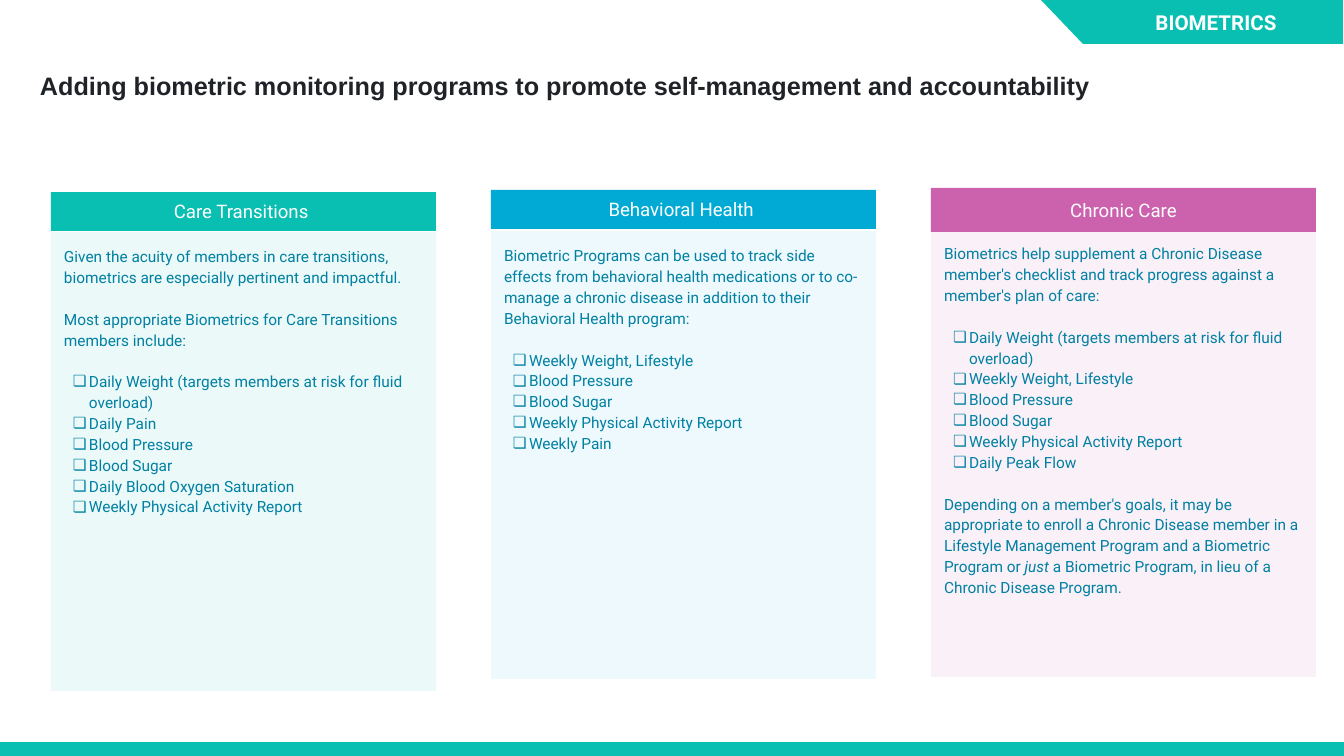
import dataclasses
from typing import Any

import pptx
import pptx.dml.color
import pptx.enum.shapes
import pptx.enum.text
import pptx.oxml
import pptx.oxml.ns
import pptx.util

PX = pptx.util.Inches(1) / 84
PAD = 13
COLORS = {"teal": "09BFB1", "blue": "00AAD5", "pink": "CC61AD",
          "text": "0080A3", "dark": "1F2327", "white": "FFFFFF"}
ALIGN = pptx.enum.text.PP_ALIGN
ANCHOR = pptx.enum.text.MSO_ANCHOR
RECT = pptx.enum.shapes.MSO_SHAPE.RECTANGLE
Pt = pptx.util.Pt

TITLE = {"name": "Arial", "size": Pt(21.6), "bold": True}
TAG = {"name": "Roboto", "size": Pt(17.6), "bold": True}
HEAD = {"name": "Roboto", "size": Pt(16), "bold": False}
BODY = {"name": "Roboto", "size": Pt(13.2), "bold": False}


@dataclasses.dataclass(frozen=True)
class Box:
    left: int
    top: int
    width: int
    height: int

    def emu(self) -> list[int]:
        return [px(side) for side in dataclasses.astuple(self)]


@dataclasses.dataclass(frozen=True)
class Card:
    """One program: heading, bar and panel extents, and its text blocks.

    A string block is a plain paragraph, with *italic* words starred;
    a tuple block is a checklist.
    """
    head: str
    color: str
    alpha: int
    bar_top: int
    bar_tall: int
    top: int
    tall: int
    blocks: tuple[str | tuple[str, ...], ...]


CARDS = [
    Card("Care Transitions ", "teal", 8, 192, 39, 232, 459, (
        "Given the acuity of members in care transitions, biometrics are "
        "especially pertinent and impactful.",
        "Most appropriate Biometrics for Care Transitions members include:",
        ("Daily Weight (targets members at risk for fluid overload)",
         "Daily Pain", "Blood Pressure", "Blood Sugar",
         "Daily Blood Oxygen Saturation", "Weekly Physical Activity Report"))),
    Card("Behavioral Health ", "blue", 7, 190, 39, 231, 448, (
        "Biometric Programs can be used to track side effects from behavioral "
        "health medications or to co-manage a chronic disease in addition to "
        "their Behavioral Health program:",
        ("Weekly Weight, Lifestyle", "Blood Pressure", "Blood Sugar",
         "Weekly Physical Activity Report", "Weekly Pain"))),
    Card("Chronic Care", "pink", 9, 188, 44, 229, 448, (
        "Biometrics help supplement a Chronic Disease member's checklist and "
        "track progress against a member's plan of care:",
        ("Daily Weight (targets members at risk for fluid overload)",
         "Weekly Weight, Lifestyle", "Blood Pressure", "Blood Sugar",
         "Weekly Physical Activity Report", "Daily Peak Flow"),
        "Depending on a member's goals, it may be appropriate to enroll a "
        "Chronic Disease member in a Lifestyle Management Program and a "
        "Biometric Program or *just* a Biometric Program, in lieu of a "
        "Chronic Disease Program.")),
]


def px(count: int) -> int:
    return round(count * PX)


def rgb(color: str) -> pptx.dml.color.RGBColor:
    return pptx.dml.color.RGBColor.from_string(COLORS[color])


def apply(item: Any, form: dict[str, Any]) -> None:
    for key, value in form.items():
        setattr(item, key, value)


def place(shape: Any, box: Box) -> None:
    apply(shape, dict(zip(("left", "top", "width", "height"), box.emu())))


def frame(shape: Any, anchor: Any, pad: int = PAD) -> Any:
    """Set the insets and anchor of a shape's text and return its frame."""
    text = shape.text_frame
    apply(text, {"margin_left": px(PAD), "margin_right": px(PAD),
                 "margin_top": px(pad), "margin_bottom": px(pad),
                 "word_wrap": True, "vertical_anchor": anchor,
                 "auto_size": pptx.enum.text.MSO_AUTO_SIZE.NONE})
    return text


def write(para: Any, text: str, form: dict[str, Any], color: str) -> None:
    """Add runs to a paragraph, with starred words in italics."""
    for index, part in enumerate(text.split("*")):
        run = para.add_run()
        run.text = part
        apply(run.font, form)
        run.font.color.rgb = rgb(color)
        if index % 2:
            run.font.italic = True


def label(shape: Any, text: str, form: dict[str, Any]) -> None:
    para = frame(shape, ANCHOR.MIDDLE).paragraphs[0]
    para.alignment = ALIGN.CENTER
    write(para, text, form, "white")


def paint(shape: Any, color: str) -> None:
    shape.shadow.inherit = False
    shape.fill.solid()
    shape.fill.fore_color.rgb = rgb(color)
    shape.line.fill.background()


def bar(slide: Any, box: Box, color: str) -> Any:
    shape = slide.shapes.add_shape(RECT, *box.emu())
    paint(shape, color)
    return shape


def indent(para: Any, check: bool) -> None:
    """Give a paragraph a check box bullet, or no bullet at all."""
    props = para._p.get_or_add_pPr()
    props.set("marL", str(px(25 if check else 0)))
    props.set("indent", str(px(-16 if check else 0)))
    space = pptx.oxml.ns.nsdecls("a")
    marks = [f"<a:buNone {space}/>"]
    if check:
        marks = [f'<a:buClr {space}><a:srgbClr val="{COLORS["text"]}"/></a:buClr>',
                 f'<a:buChar {space} char="❏"/>']
    for mark in marks:
        props.append(pptx.oxml.parse_xml(mark))


def fill_panel(panel: Any, card: Card) -> None:
    panel.fill.solid()
    panel.fill.fore_color.rgb = rgb(card.color)
    tint = panel._element.spPr.find(".//" + pptx.oxml.ns.qn("a:srgbClr"))
    tint.append(pptx.oxml.parse_xml(
        f'<a:alpha {pptx.oxml.ns.nsdecls("a")} val="{card.alpha * 1000}"/>'))
    text = frame(panel, ANCHOR.TOP)
    para = text.paragraphs[0]
    for order, block in enumerate(card.blocks):
        check = isinstance(block, tuple)
        for row, line in enumerate(block if check else (block,)):
            if order or row:
                para = text.add_paragraph()
            indent(para, check)
            apply(para, {"line_spacing": 1.13, "alignment": ALIGN.LEFT,
                         "space_before": Pt(17.8 if order and not row else 0)})
            write(para, line, BODY, "text")


def main() -> None:
    deck = pptx.Presentation()
    deck.slide_width, deck.slide_height = px(1344), px(756)
    slide = deck.slides.add_slide(deck.slide_layouts.get_by_name("Comparison"))
    title, *panels, spare = slide.placeholders
    spare._element.getparent().remove(spare._element)

    bar(slide, Box(0, 742, 1344, 14), "teal")

    place(title, Box(27, 63, 1317, 84))
    para = frame(title, ANCHOR.TOP, 7).paragraphs[0]
    para.alignment = ALIGN.LEFT
    write(para, "Adding biometric monitoring programs to promote "
          "self-management and accountability", TITLE, "dark")

    for index, (card, panel) in enumerate(zip(CARDS, panels)):
        left = 51 + 440 * index
        head = bar(slide, Box(left, card.bar_top, 385, card.bar_tall), card.color)
        label(head, card.head, HEAD)
        place(panel, Box(left, card.top, 385, card.tall))
        fill_panel(panel, card)

    build = slide.shapes.build_freeform(1041, 0, scale=PX)
    build.add_line_segments([(1083, 44), (1343, 44), (1343, 0)], close=True)
    paint(build.convert_to_shape(), "teal")
    tag = slide.shapes.add_textbox(*Box(1088, 2, 256, 40).emu())
    label(tag, "BIOMETRICS", TAG)

    deck.save("out.pptx")


if __name__ == "__main__":
    main()
